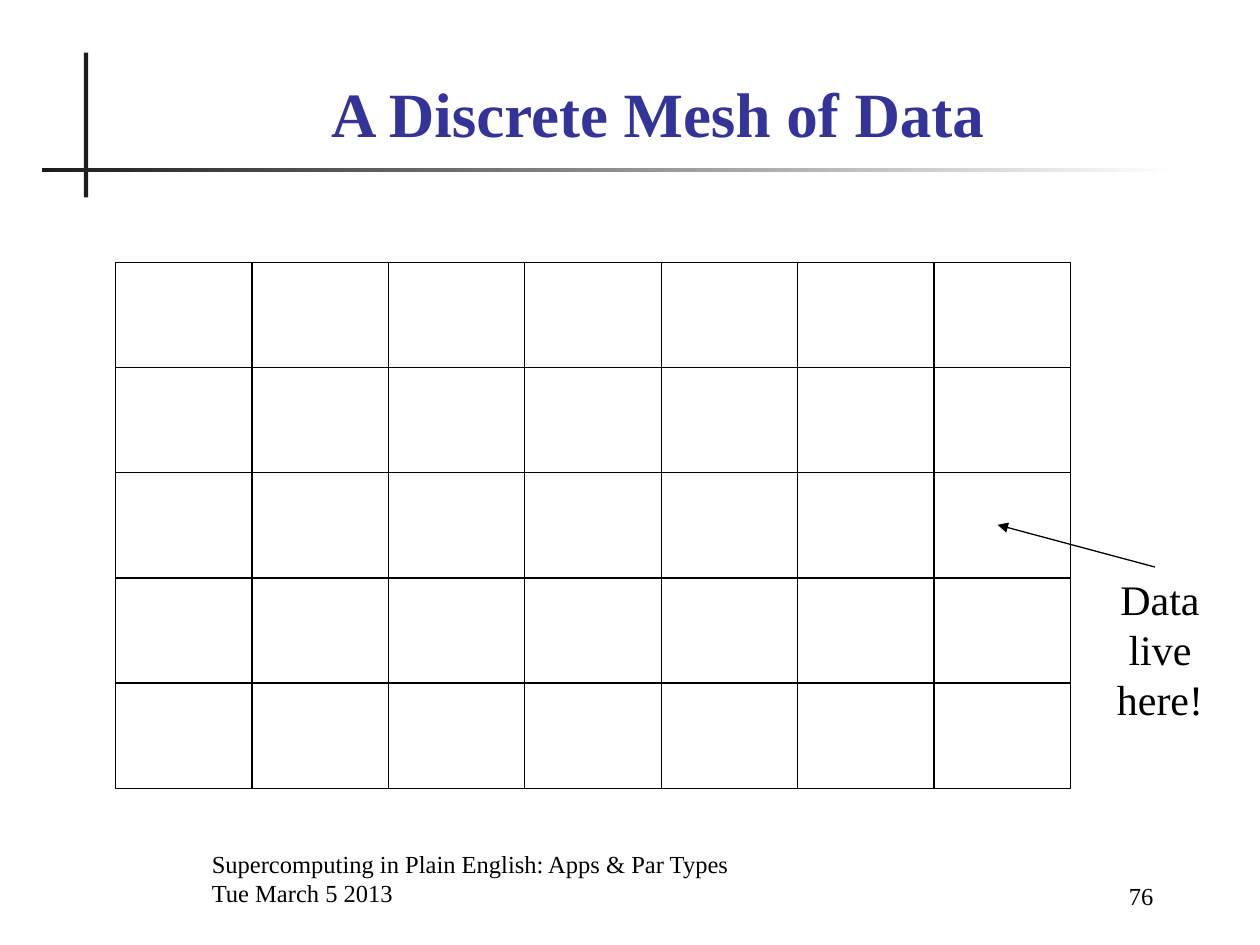
from lxml import etree
from pptx import Presentation
from pptx.dml.color import RGBColor
from pptx.enum.shapes import MSO_CONNECTOR, MSO_SHAPE
from pptx.enum.text import MSO_ANCHOR, PP_ALIGN
from pptx.oxml.ns import qn
from pptx.util import Cm, Pt

RECTANGLE = MSO_SHAPE.RECTANGLE
STRAIGHT = MSO_CONNECTOR.STRAIGHT
TOP, BOTTOM = MSO_ANCHOR.TOP, MSO_ANCHOR.BOTTOM
LEFT, CENTER, RIGHT = PP_ALIGN.LEFT, PP_ALIGN.CENTER, PP_ALIGN.RIGHT

FONT = "Times New Roman"
COLORS = {"rule": "1C1C1C", "fade": "FFFFFF", "title": "333399", "ink": "000000"}
MESH_ROWS, MESH_COLUMNS = 5, 7
MESH_LEFT, MESH_TOP = 2.33, 5.29
CELL_WIDTH, CELL_HEIGHT = 2.75, 2.12


def color(key):
    """Return the named colour."""
    return RGBColor.from_string(COLORS[key])


def add_box(slide, left, top, width, height):
    """Add a rectangle without shadow, measured in centimetres."""
    box = slide.shapes.add_shape(RECTANGLE, Cm(left), Cm(top), Cm(width), Cm(height))
    box.shadow.inherit = False
    return box


def add_title_rules(slide):
    """Draw the solid upright rule and the fading level rule."""
    upright = add_box(slide, 1.69, 1.06, 0.09, 2.92)
    upright.fill.solid()
    upright.fill.fore_color.rgb = color("rule")
    level = add_box(slide, 0.85, 3.39, 22.86, 0.08)
    level.fill.gradient()
    level.fill.gradient_angle = 0
    for stop, key in zip(level.fill.gradient_stops, ("rule", "fade")):
        stop.color.rgb = color(key)
    for rule in (upright, level):
        rule.line.fill.background()


def add_mesh(slide):
    """Draw the grid of empty outlined cells."""
    for row in range(MESH_ROWS):
        for column in range(MESH_COLUMNS):
            cell = add_box(slide, MESH_LEFT + column * CELL_WIDTH,
                           MESH_TOP + row * CELL_HEIGHT, CELL_WIDTH, CELL_HEIGHT)
            cell.fill.background()
            cell.line.color.rgb = color("ink")
            cell.line.width = Pt(0.75)


def add_arrow(slide, start, end):
    """Draw a thin line with a triangular head at its end."""
    arrow = slide.shapes.add_connector(STRAIGHT, *map(Cm, start + end))
    arrow.line.color.rgb = color("ink")
    arrow.line.width = Pt(0.75)
    head = etree.SubElement(arrow.line._get_or_add_ln(), qn("a:tailEnd"))
    head.set("type", "triangle")
    etree.SubElement(arrow._element.spPr, qn("a:effectLst"))


def add_text(slide, place, lines, size, align=LEFT, anchor=BOTTOM, key="ink", bold=False):
    """Add a wrapped text box with one paragraph per line."""
    frame = slide.shapes.add_textbox(*map(Cm, place)).text_frame
    frame.word_wrap = True
    frame.vertical_anchor = anchor
    for index, line in enumerate(lines):
        paragraph = frame.add_paragraph() if index else frame.paragraphs[0]
        paragraph.alignment = align
        run = paragraph.add_run()
        run.text = line
        run.font.name = FONT
        run.font.size = Pt(size)
        run.font.bold = bold
        run.font.color.rgb = color(key)


def main():
    """Build and save the mesh slide."""
    deck = Presentation()
    deck.slide_width, deck.slide_height = Cm(25.4), Cm(19.05)
    slide = deck.slides.add_slide(deck.slide_layouts[6])
    add_title_rules(slide)
    add_text(slide, (2.12, 1.27, 22.28, 1.88), ["A Discrete Mesh of Data"], 36,
             align=CENTER, key="title", bold=True)
    add_mesh(slide)
    add_arrow(slide, (23.28, 11.43), (20.11, 10.58))
    add_text(slide, (22.01, 11.43, 2.75, 3.3), ["Data live here!"], 24,
             align=CENTER, anchor=TOP)
    add_text(slide, (4.02, 17.15, 15.45, 1.27),
             ["Supercomputing in Plain English: Apps & Par Types", "Tue March 5 2013"], 14)
    add_text(slide, (19.9, 17.2, 3.6, 1.27), ["76"], 14, align=RIGHT)
    deck.save("out.pptx")


if __name__ == "__main__":
    main()
